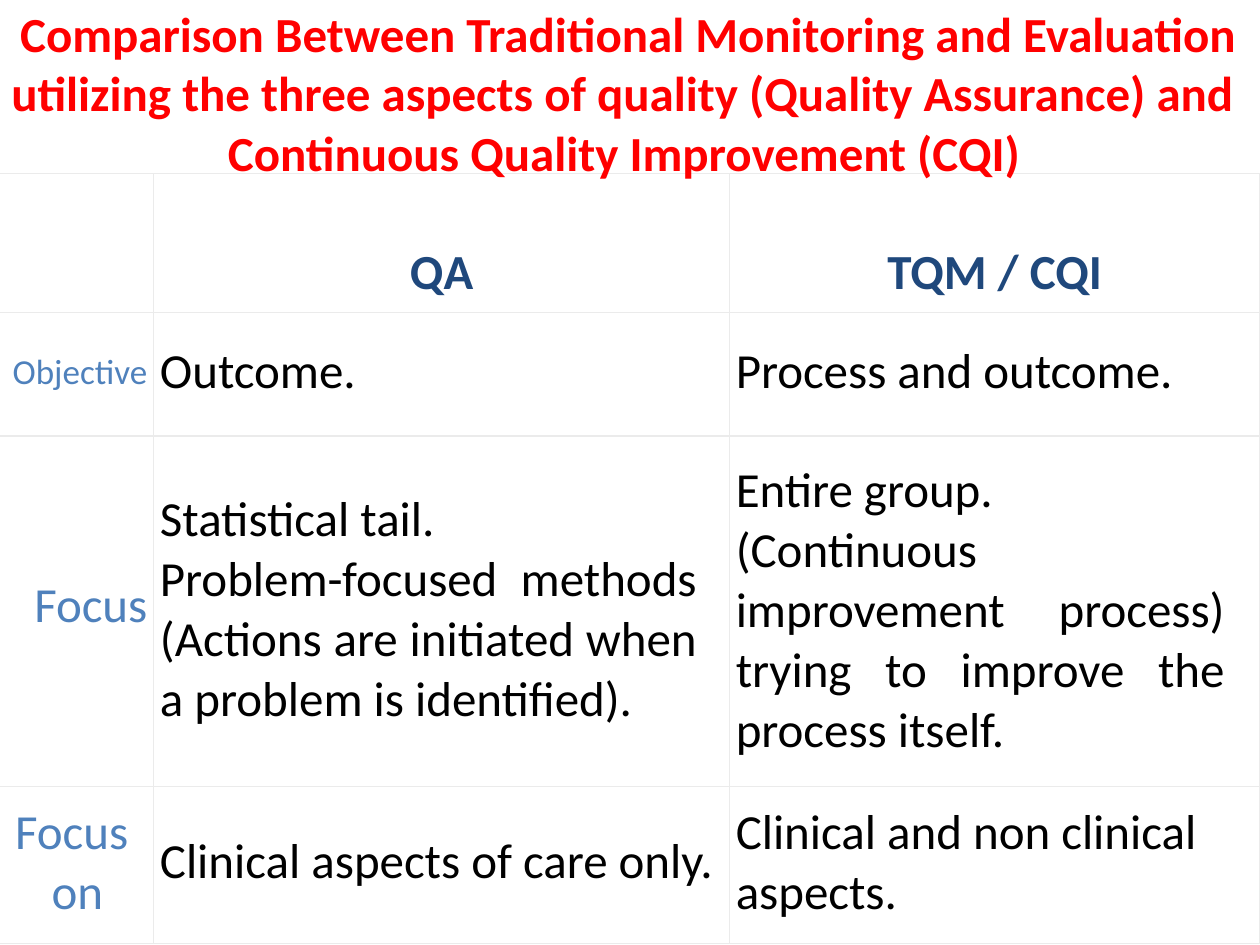
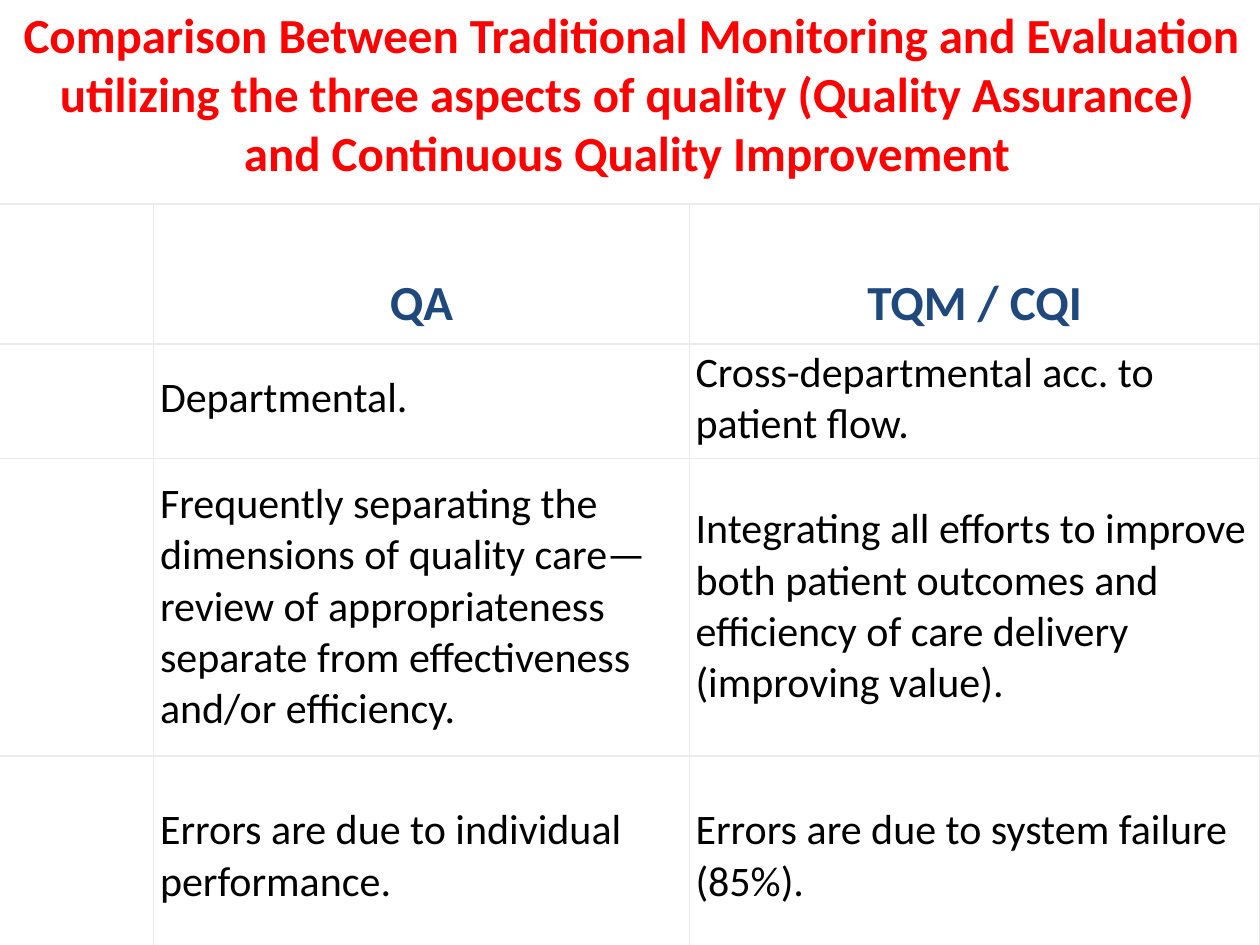
from dataclasses import dataclass

from lxml import etree
from pptx import Presentation
from pptx.dml.color import RGBColor
from pptx.enum.shapes import MSO_CONNECTOR
from pptx.enum.text import MSO_ANCHOR, PP_ALIGN
from pptx.oxml.ns import qn
from pptx.util import Inches, Pt

LEFT, CENTER, RIGHT, JUSTIFY = (
    PP_ALIGN.LEFT, PP_ALIGN.CENTER, PP_ALIGN.RIGHT, PP_ALIGN.JUSTIFY)
TOP = MSO_ANCHOR.TOP
STRAIGHT = MSO_CONNECTOR.STRAIGHT


@dataclass(frozen=True)
class Theme:
    font: str = "Calibri"
    title: str = "FF0000"
    heading: str = "1F487C"
    label: str = "4F81BC"
    body: str = "000000"
    rule: str = "EBEBEB"
    rule_width: float = 0.75
    large: int = 28
    medium: int = 24
    small: int = 20


@dataclass(frozen=True)
class Entry:
    """Text of one cell, with its distance from the cell's top and right."""
    text: str
    top: float
    right: float = 0
    left: float = 0.05
    hanging: float = 0
    align: PP_ALIGN = LEFT
    size: int = Theme.large
    color: str = Theme.body
    bold: bool = False


def heading(text):
    return Entry(text, 0.55, left=0, align=CENTER, color=Theme.heading, bold=True)


def label(text, top, **changes):
    values = dict(right=0.05, left=0, align=RIGHT, color=Theme.label)
    return Entry(text, top, **{**values, **changes})


def note(text, top, right=0):
    return Entry(text, top, right, size=Theme.medium)


class Builder:
    def __init__(self, theme):
        self.theme = theme
        self.deck = Presentation()
        self.deck.slide_width, self.deck.slide_height = Inches(10), Inches(7.5)
        self.page = None

    def new_page(self):
        self.page = self.deck.slides.add_slide(self.deck.slide_layouts[6])

    def set_text(self, frame, text, size, color, align=LEFT, bold=False,
                 left=0, indent=0):
        """Fill a frame; each line of the text is one paragraph."""
        frame.word_wrap = True
        for number, line in enumerate(text.split("\n")):
            para = frame.add_paragraph() if number else frame.paragraphs[0]
            para.text = line
            para.alignment = align
            properties = para._p.get_or_add_pPr()
            properties.set("marL", str(Inches(left)))
            properties.set("indent", str(Inches(indent)))
            for span in para.runs:
                values = dict(name=self.theme.font, size=Pt(size), bold=bold)
                for name, value in values.items():
                    setattr(span.font, name, value)
                span.font.color.rgb = RGBColor.from_string(color)

    def title(self, text, left, top, width, height, align=LEFT, indent=0):
        box = self.page.shapes.add_textbox(
            *map(Inches, (left, top, width, height)))
        frame = box.text_frame
        margins = dict(margin_left=0, margin_right=0, margin_bottom=0,
                       margin_top=Inches(0.03), vertical_anchor=TOP)
        for name, value in margins.items():
            setattr(frame, name, value)
        self.set_text(frame, text, self.theme.large, self.theme.title, align,
                      True, 0.01, indent)

    def rule(self, y):
        line = self.page.shapes.add_connector(
            STRAIGHT, 0, Inches(y), self.deck.slide_width, Inches(y))
        line.line.color.rgb = RGBColor.from_string(self.theme.rule)
        line.line.width = Pt(self.theme.rule_width)
        etree.SubElement(line._element.spPr, qn("a:effectLst"))

    def borders(self, cell, sides):
        properties = cell._tc.get_or_add_tcPr()
        for side in "LRTB":
            edge = etree.SubElement(properties, qn(f"a:ln{side}"))
            if side in sides:
                edge.set("w", str(Pt(self.theme.rule_width)))
                fill = etree.SubElement(edge, qn("a:solidFill"))
                etree.SubElement(fill, qn("a:srgbClr"), val=self.theme.rule)
            else:
                etree.SubElement(edge, qn("a:noFill"))

    def table(self, left, top, widths, heights, rows, first_sides, sides):
        """Draw the rows; the first column may have its own border sides."""
        table = self.page.shapes.add_table(
            len(heights), len(widths), Inches(left), Inches(top),
            Inches(sum(widths)), Inches(sum(heights))).table
        table.first_row = table.horz_banding = False
        for column, width in zip(table.columns, widths):
            column.width = Inches(width)
        for row, height in zip(table.rows, heights):
            row.height = Inches(height)
        for row, entries in enumerate(rows):
            for column, entry in enumerate(entries):
                cell = table.cell(row, column)
                self.borders(cell, sides if column else first_sides)
                cell.fill.background()
                if entry:
                    self.fill_cell(cell, entry)

    def fill_cell(self, cell, entry):
        margins = dict(margin_left=Inches(entry.left), margin_bottom=0,
                       margin_right=Inches(entry.right),
                       margin_top=Inches(entry.top), vertical_anchor=TOP)
        for name, value in margins.items():
            setattr(cell, name, value)
        self.set_text(cell.text_frame, entry.text, entry.size, entry.color,
                      entry.align, entry.bold, entry.hanging, -entry.hanging)


TITLE_START = ("Comparison Between Traditional Monitoring and Evaluation "
               "utilizing the three aspects of quality (Quality Assurance)")
HEADINGS = [heading("QA"), heading("TQM / CQI")]


def objective_and_focus(builder):
    builder.new_page()
    rows = [
        [None, *HEADINGS],
        [label("Objective", 0.31, size=Theme.small),
         Entry("Outcome.", 0.23),
         Entry("Process and outcome.", 0.23)],
        [label("Focus", 1.11),
         Entry("Statistical tail.\nProblem-focused methods (Actions are "
               "initiated when a problem is identified).",
               0.43, 0.26, align=JUSTIFY),
         Entry("Entire group.\n(Continuous\nimprovement process) trying to "
               "improve the process itself.", 0.2, 0.28, align=JUSTIFY)],
        [label("Focus on", 0.13, left=0.12, right=0, hanging=0.29, align=LEFT),
         Entry("Clinical aspects of care only.", 0.36),
         Entry("Clinical and non clinical aspects.", 0.13)],
    ]
    # The first column has no line at the slide's edge
    builder.table(0, 1.38, [1.22, 4.57, 4.21], [1.1, 0.98, 2.78, 1.25],
                  rows, "RTB", "LRTB")
    builder.title(f"{TITLE_START} and", 0.08, 0, 9.78, 0.96, indent=0.07)
    builder.title("Continuous Quality Improvement (CQI)", 1.8, 0.94, 6.33, 0.5)


def departments_and_errors(builder):
    builder.new_page()
    rows = [
        HEADINGS,
        [note("Departmental.", 0.23),
         note("Cross-departmental acc. to patient flow.", 0.03)],
        [note("Frequently separating the dimensions of quality care— review "
              "of appropriateness separate from effectiveness and/or "
              "efficiency.", 0.16, 0.26),
         note("Integrating all efforts to improve both patient outcomes and "
              "efficiency of care delivery (improving value).", 0.36, 0.06)],
        [note("Errors are due to individual\nperformance.", 0.39),
         note("Errors are due to system failure\n(85%).", 0.39)],
    ]
    top, heights = 1.62, [1.11, 0.91, 2.36, 1.5]
    builder.table(1.22, top, [4.25, 4.53], heights, rows, "LR", "LR")
    # Lines above the rows run the full width of the slide
    for row in range(len(heights)):
        builder.rule(top + sum(heights[:row]))
    builder.title(f"{TITLE_START}\vand Continuous Quality Improvement",
                  0.08, 0.01, 9.78, 1.43, CENTER, 0.07)


def main():
    builder = Builder(Theme())
    objective_and_focus(builder)
    departments_and_errors(builder)
    builder.deck.save("out.pptx")


if __name__ == "__main__":
    main()
